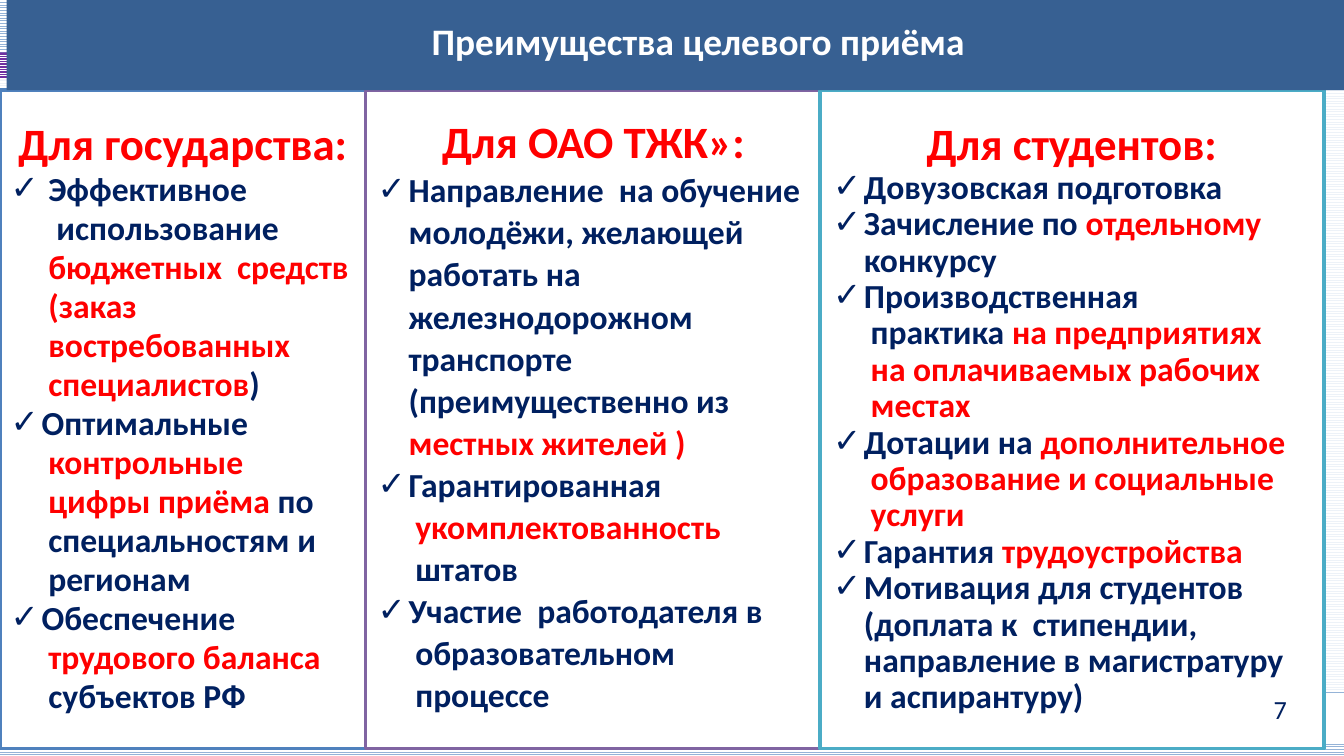
from lxml.etree import SubElement
from pptx import Presentation
from pptx.dml.color import RGBColor
from pptx.enum.dml import MSO_PATTERN
from pptx.enum.shapes import MSO_SHAPE
from pptx.enum.text import MSO_ANCHOR, PP_ALIGN
from pptx.oxml.ns import qn
from pptx.util import Inches, Pt

WHITE = RGBColor(0xFF, 0xFF, 0xFF)
RED = RGBColor(0xFF, 0x00, 0x00)
NAVY = RGBColor(0x00, 0x20, 0x60)
HEADER_BLUE = RGBColor(0x37, 0x60, 0x92)
STRIPE_BLUE = RGBColor(0x95, 0xB3, 0xD7)
STRIPE_PURPLE = RGBColor(0x70, 0x30, 0xA0)
BLUE = RGBColor(0x4F, 0x81, 0xBD)
PURPLE = RGBColor(0x80, 0x64, 0xA2)
TEAL = RGBColor(0x4B, 0xAC, 0xC6)
FONT = "Calibri"

# Column: left, width, border, side inset, top inset, heading, heading spacing,
# line spacing, lines.
# Line: bulleted, indent, text; the parts between asterisks are red.
COLUMNS = [
    (0, 2.72, BLUE, 0.08, 0.28, "Для государства:", 22.5, 20.9, [
        (True, 0.28, "Эффективное"),
        (False, 0.34, "использование"),
        (False, 0.28, "*бюджетных  средств*"),
        (False, 0.28, "*(заказ*"),
        (False, 0.28, "*востребованных*"),
        (False, 0.28, "*специалистов*)"),
        (True, 0.23, "Оптимальные"),
        (False, 0.28, "*контрольные*"),
        (False, 0.28, "*цифры приёма *по"),
        (False, 0.28, "специальностям и"),
        (False, 0.28, "регионам"),
        (True, 0.23, "Обеспечение"),
        (False, 0.28, "*трудового баланса*"),
        (False, 0.28, "субъектов РФ"),
    ]),
    (2.72, 3.39, PURPLE, 0.09, 0.26, "Для ОАО ТЖК»:", 22.9, 22.5, [
        (True, 0.23, "Направление  на обучение"),
        (False, 0.23, "молодёжи, желающей"),
        (False, 0.23, "работать на"),
        (False, 0.23, "железнодорожном"),
        (False, 0.23, "транспорте"),
        (False, 0.23, "(преимущественно из"),
        (False, 0.23, "*местных жителей )*"),
        (True, 0.23, "Гарантированная"),
        (False, 0.28, "*укомплектованность*"),
        (False, 0.28, "штатов"),
        (True, 0.23, "Участие  работодателя в"),
        (False, 0.28, "образовательном"),
        (False, 0.28, "процессе"),
    ]),
    (6.1, 3.75, TEAL, 0.1, 0.28, "Для студентов:", 22.5, 19.5, [
        (True, 0.23, "Довузовская подготовка"),
        (True, 0.23, "Зачисление по *отдельному*"),
        (False, 0.23, "конкурсу"),
        (True, 0.23, "Производственная"),
        (False, 0.28, "практика *на предприятиях*"),
        (False, 0.28, "*на оплачиваемых рабочих*"),
        (False, 0.28, "*местах*"),
        (True, 0.23, "Дотации на *дополнительное*"),
        (False, 0.28, "*образование и социальные*"),
        (False, 0.28, "*услуги*"),
        (True, 0.23, "Гарантия *трудоустройства*"),
        (True, 0.23, "Мотивация для студентов"),
        (False, 0.23, "(доплата к  стипендии,"),
        (False, 0.23, "направление в магистратуру"),
        (False, 0.23, "и аспирантуру)"),
    ]),
]

presentation = Presentation()
presentation.slide_width = Inches(10)
presentation.slide_height = Inches(10 * 9 / 16)
slide = presentation.slides.add_slide(presentation.slide_layouts[6])


def set_pattern(fill, pattern, fore, back):
    fill.patterned()
    fill.pattern = pattern
    fill.fore_color.rgb = fore
    fill.back_color.rgb = back


def add_rectangle(left, top, width, height, color=WHITE):
    shape = slide.shapes.add_shape(
        MSO_SHAPE.RECTANGLE, Inches(left), Inches(top), Inches(width), Inches(height))
    shape.shadow.inherit = False
    shape.fill.solid()
    shape.fill.fore_color.rgb = color
    shape.line.fill.background()
    return shape


# Striped background with translucent panels
set_pattern(slide.background.fill, MSO_PATTERN.LIGHT_HORIZONTAL, STRIPE_BLUE, WHITE)
stripe = add_rectangle(0, 0.39, 10, 0.2)
set_pattern(stripe.fill, MSO_PATTERN.NARROW_HORIZONTAL, WHITE, STRIPE_PURPLE)
add_rectangle(0, 5.17, 10, 0.35)
for _ in range(2):
    veil = add_rectangle(0, 0.59, 10, 4.55)
    color_element = veil.fill._xPr.find(qn("a:solidFill"))[0]
    SubElement(color_element, qn("a:alpha"), val="60000")

# Three columns of advantages
for (left, width, border, side_inset, top_inset,
     heading, heading_spacing, spacing, lines) in COLUMNS:
    column = add_rectangle(left, 0.67, width, 4.9)
    column.line.color.rgb = border
    column.line.width = Pt(2)
    frame = column.text_frame
    frame.word_wrap = True
    frame.vertical_anchor = MSO_ANCHOR.TOP
    frame.margin_top = Inches(top_inset)
    frame.margin_left = frame.margin_right = Inches(side_inset)

    paragraph = frame.paragraphs[0]
    paragraph.text = heading
    paragraph.alignment = PP_ALIGN.CENTER
    paragraph.line_spacing = Pt(heading_spacing)
    paragraph.font.name = FONT
    paragraph.font.size = Pt(24)
    paragraph.font.bold = True
    paragraph.font.color.rgb = RED

    for bulleted, indent, text in lines:
        paragraph = frame.add_paragraph()
        properties = paragraph._p.get_or_add_pPr()
        properties.set("marL", str(Inches(indent)))
        properties.set("indent", str(-Inches(indent) if bulleted else 0))
        if bulleted:
            SubElement(properties, qn("a:buFont"), typeface=FONT)
            SubElement(properties, qn("a:buChar"), char="✓")
        paragraph.alignment = PP_ALIGN.LEFT
        paragraph.line_spacing = Pt(spacing)
        paragraph.font.name = FONT
        paragraph.font.size = Pt(18)
        paragraph.font.bold = True
        for index, part in enumerate(text.split("*")):
            if part:
                run = paragraph.add_run()
                run.text = part
                run.font.color.rgb = RED if index % 2 else NAVY

# Title band and page number
title = add_rectangle(0.05, -0.41, 10, 1.08, HEADER_BLUE)
title.text_frame.margin_top = Inches(0.39)
title.text_frame.margin_left = Inches(0.39)
page_number = add_rectangle(9.33, 5.17, 0.39, 0.21)
for shape, text, size, bold, color in [
    (title, "Преимущества целевого приёма", 20, True, WHITE),
    (page_number, "7", 14, False, NAVY),
]:
    shape.text_frame.vertical_anchor = MSO_ANCHOR.MIDDLE
    paragraph = shape.text_frame.paragraphs[0]
    paragraph.text = text
    paragraph.alignment = PP_ALIGN.CENTER
    paragraph.font.name = FONT
    paragraph.font.size = Pt(size)
    paragraph.font.bold = bold
    paragraph.font.color.rgb = color

presentation.save("out.pptx")
